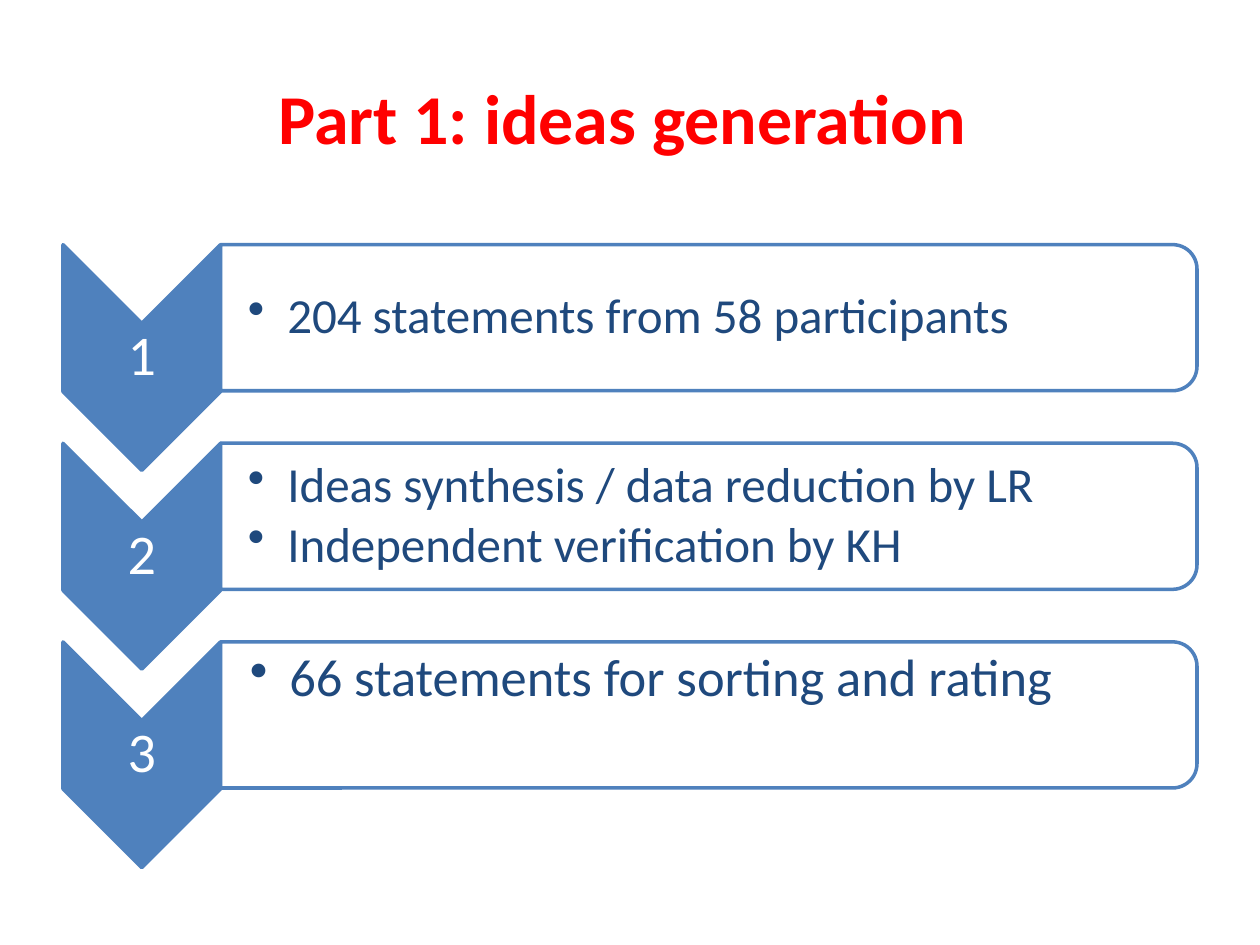
from lxml import etree
from pptx import Presentation
from pptx.dml.color import RGBColor
from pptx.enum.shapes import MSO_SHAPE
from pptx.enum.text import MSO_ANCHOR, PP_ALIGN
from pptx.oxml.ns import qn
from pptx.util import Pt

CHEVRON, ROUND_TOP = MSO_SHAPE.CHEVRON, MSO_SHAPE.ROUND_2_SAME_RECTANGLE
MIDDLE, TOP = MSO_ANCHOR.MIDDLE, MSO_ANCHOR.TOP
CENTER, LEFT = PP_ALIGN.CENTER, PP_ALIGN.LEFT
BLUE, NAVY, WHITE, RED = "4F81BD", "1F497D", "FFFFFF", "FF0000"

STEPS = [
    (["204 statements from 58 participants"], 28, MIDDLE),
    (["Ideas synthesis / data reduction by LR",
      "Independent verification by KH"], 28, MIDDLE),
    (["66 statements for sorting and rating"], 30, TOP),
]


def rgb(value):
    return RGBColor.from_string(value)


def set_attrs(obj, values):
    for name, value in values.items():
        setattr(obj, name, value)


def add_run(p, text, size, color, bold=False):
    r = p.add_run()
    r.text = text
    set_attrs(r.font, {"name": "Calibri", "size": Pt(size), "bold": bold})
    r.font.color.rgb = rgb(color)


def add_bullet(p, indent):
    pPr = p._p.get_or_add_pPr()
    pPr.set("marL", str(Pt(indent)))
    pPr.set("indent", str(-Pt(indent)))
    etree.SubElement(pPr, qn("a:buChar")).set("char", "•")


def add_turned_shape(shapes, kind, left, top, width, height, fill):
    x, y = left + (width - height) / 2, top + (height - width) / 2
    sp = shapes.add_shape(kind, Pt(x), Pt(y), Pt(height), Pt(width))
    sp.rotation = 90
    sp.shadow.inherit = False
    sp.fill.solid()
    sp.fill.fore_color.rgb = rgb(fill)
    sp.line.color.rgb = rgb(BLUE)
    sp.line.width = Pt(2)
    return sp


def add_text(shapes, box, lines, size, color, align, anchor=MIDDLE,
             inset=1.4, indent=0, after=0):
    tf = shapes.add_textbox(*map(Pt, box)).text_frame
    set_attrs(tf, {"word_wrap": True, "vertical_anchor": anchor,
                   "margin_left": Pt(inset), "margin_right": Pt(1.4),
                   "margin_top": Pt(1.4), "margin_bottom": Pt(1.4)})
    for i, line in enumerate(lines):
        p = tf.add_paragraph() if i else tf.paragraphs[0]
        set_attrs(p, {"alignment": align, "line_spacing": 0.9,
                      "space_after": Pt(after)})
        if indent:
            add_bullet(p, indent)
        add_run(p, line, size, color)


def add_title(s, text, left, top, width, height):
    sp = s.shapes.title
    set_attrs(sp, {"left": Pt(left), "top": Pt(top),
                   "width": Pt(width), "height": Pt(height)})
    tf = sp.text_frame
    tf.vertical_anchor = MIDDLE
    p = tf.paragraphs[0]
    p.alignment = CENTER
    add_run(p, text, 40, RED, bold=True)


def add_step(shapes, number, step, left, top, width, height):
    lines, size, anchor = step
    arrow_w, panel_h = 90, 83.5
    add_turned_shape(shapes, CHEVRON, left, top, arrow_w, height, BLUE)
    add_text(shapes, (left, top + arrow_w / 2, arrow_w, height - arrow_w),
             [str(number)], 32, WHITE, CENTER)
    x, panel_w = left + arrow_w, width - arrow_w
    panel = add_turned_shape(shapes, ROUND_TOP, x, top, panel_w, panel_h, WHITE)
    color = panel.fill._xPr.find(".//" + qn("a:srgbClr"))
    etree.SubElement(color, qn("a:alpha")).set("val", "90000")
    add_text(shapes, (x, top + 4, panel_w - 4, panel_h - 8), lines, size, NAVY,
             LEFT, anchor, inset=size * 0.56, indent=22.5, after=4)


def add_steps(s, left, top, width, height, pitch):
    shapes = s.shapes.add_group_shape().shapes
    for i, step in enumerate(STEPS):
        add_step(shapes, i + 1, step, left, top + i * pitch, width, height)


def main():
    prs = Presentation()
    prs.slide_width, prs.slide_height = Pt(720), Pt(540)
    s = prs.slides.add_slide(prs.slide_layouts[5])
    add_title(s, "Part 1: ideas generation ", 36, 21.6, 648, 90)
    add_steps(s, 36, 139.8, 648, 129, 113.5)
    prs.save("out.pptx")


if __name__ == "__main__":
    main()
